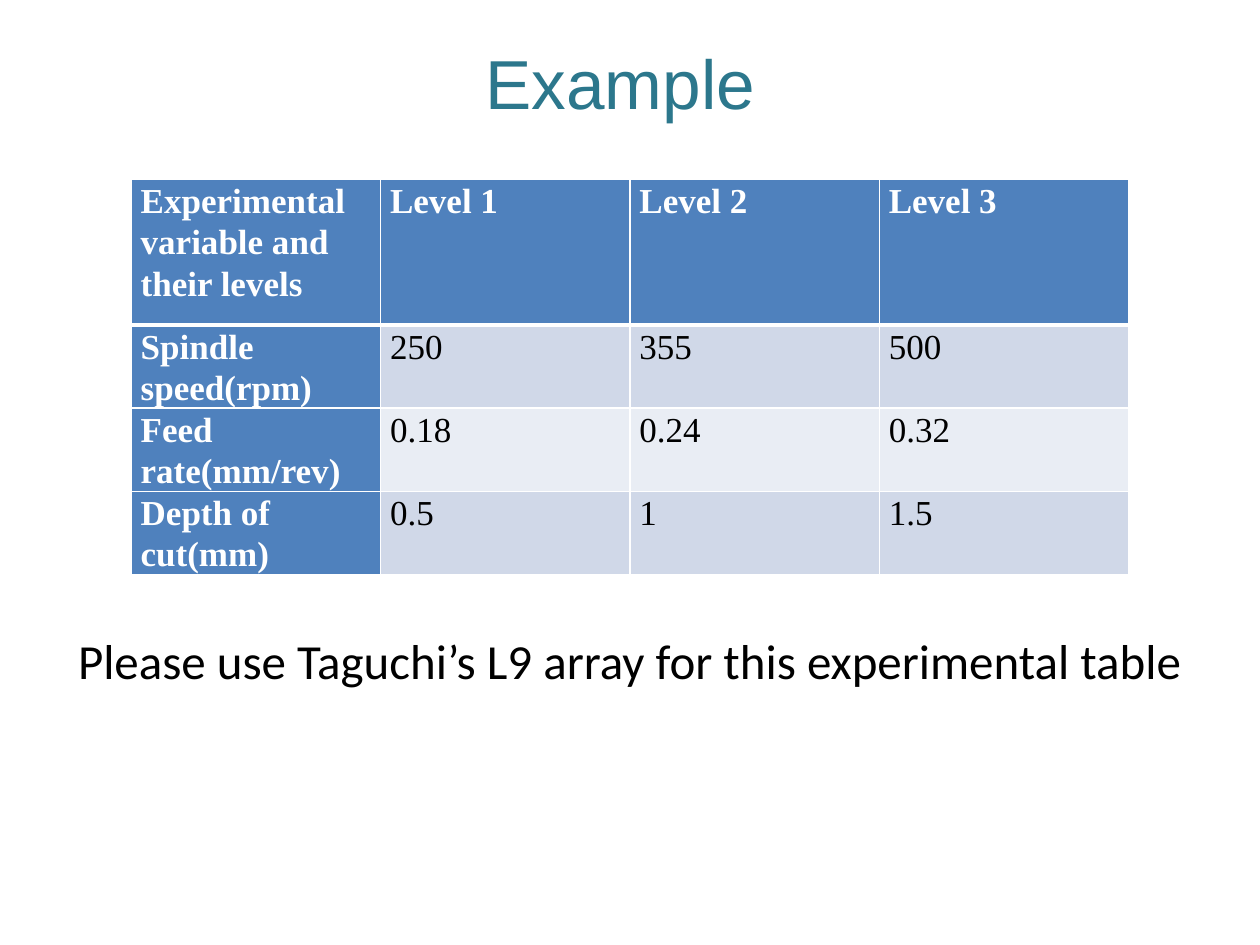
from lxml import etree
from pptx import Presentation
from pptx.dml.color import RGBColor
from pptx.enum.text import MSO_ANCHOR, MSO_AUTO_SIZE, PP_ALIGN
from pptx.oxml.ns import qn
from pptx.util import Pt

CENTER = PP_ALIGN.CENTER
LEFT = PP_ALIGN.LEFT
MIDDLE = MSO_ANCHOR.MIDDLE
NO_FIT = MSO_AUTO_SIZE.NONE
GROW = MSO_AUTO_SIZE.SHAPE_TO_FIT_TEXT

TEAL = RGBColor(0x2C, 0x77, 0x8C)
BLUE = RGBColor(0x4F, 0x81, 0xBD)
BAND_DARK = RGBColor(0xD0, 0xD8, 0xE8)
BAND_LIGHT = RGBColor(0xE9, 0xED, 0xF4)
WHITE = RGBColor(0xFF, 0xFF, 0xFF)
BLACK = RGBColor(0, 0, 0)

LEVELS = [
    ["Experimental variable and their levels", "Level 1", "Level 2", "Level 3"],
    ["Spindle speed(rpm)", "250", "355", "500"],
    ["Feed rate(mm/rev)", "0.18", "0.24", "0.32"],
    ["Depth of cut(mm)", "0.5", "1", "1.5"],
]


def write(frame, text, *, font, size, color, bold=False, align=LEFT,
          spacing=None, after=None):
    paragraph = frame.paragraphs[0]
    paragraph.alignment = align
    paragraph.line_spacing = spacing
    paragraph.space_after = after
    run = paragraph.add_run()
    run.text = text
    run.font.name = font
    run.font.size = Pt(size)
    run.font.bold = bold
    run.font.color.rgb = color


def set_borders(cell, bottom_width):
    properties = cell._tc.get_or_add_tcPr()
    widths = {"a:lnL": 1, "a:lnR": 1, "a:lnT": 1, "a:lnB": bottom_width}
    for position, (side, width) in enumerate(widths.items()):
        line = etree.Element(qn(side), w=str(Pt(width)))
        fill = etree.SubElement(line, qn("a:solidFill"))
        etree.SubElement(fill, qn("a:srgbClr"), val=str(WHITE))
        properties.insert(position, line)


class ExampleSlide:
    line_spacing = 1.07

    def __init__(self, presentation):
        self.slide = presentation.slides.add_slide(presentation.slide_layouts[5])

    def title(self, text, left, top, width, height):
        heading = self.slide.shapes.title
        heading.left, heading.top = Pt(left), Pt(top)
        heading.width, heading.height = Pt(width), Pt(height)
        frame = heading.text_frame
        frame.auto_size = NO_FIT
        frame.vertical_anchor = MIDDLE
        write(frame, text, font="Arial", size=39.6, color=TEAL, align=CENTER)

    def table(self, rows, left, top, column_width, row_heights):
        levels = self.slide.shapes.add_table(
            len(rows), len(rows[0]), Pt(left), Pt(top),
            Pt(column_width * len(rows[0])), Pt(sum(row_heights))).table
        for row, height in zip(levels.rows, row_heights):
            row.height = Pt(height)
        for r, values in enumerate(rows):
            for c, value in enumerate(values):
                self.cell(levels.cell(r, c), value, r, c)

    def cell(self, cell, value, r, c):
        heading = r == 0 or c == 0
        band = BAND_DARK if r % 2 else BAND_LIGHT
        cell.margin_left = cell.margin_right = Pt(5.4)
        cell.margin_top = cell.margin_bottom = 0
        cell.fill.solid()
        cell.fill.fore_color.rgb = BLUE if heading else band
        set_borders(cell, 3 if r == 0 else 1)
        if r == 1:
            top_line = cell._tc.tcPr.find(qn("a:lnT"))
            top_line.set("w", str(Pt(3)))
        write(cell.text_frame, value, font="Times New Roman", size=20,
              color=WHITE if heading else BLACK, bold=heading,
              spacing=self.line_spacing)

    def note(self, text, left, top, width, height):
        frame = self.slide.shapes.add_textbox(
            Pt(left), Pt(top), Pt(width), Pt(height)).text_frame
        frame.word_wrap = True
        frame.auto_size = GROW
        write(frame, text, font="Calibri", size=28, color=BLACK,
              spacing=self.line_spacing, after=Pt(8))


def main():
    presentation = Presentation()
    presentation.slide_width, presentation.slide_height = Pt(720), Pt(540)
    example = ExampleSlide(presentation)
    example.title("Example ", 36, 21.6, 648, 50.4)
    example.table(LEVELS, 75, 102.3, 142.5, [83.5] + [26.6] * 3)
    example.note("Please use Taguchi’s L9 array for this experimental table",
                 37.5, 354.2, 670.3, 44)
    presentation.save("out.pptx")


if __name__ == "__main__":
    main()
